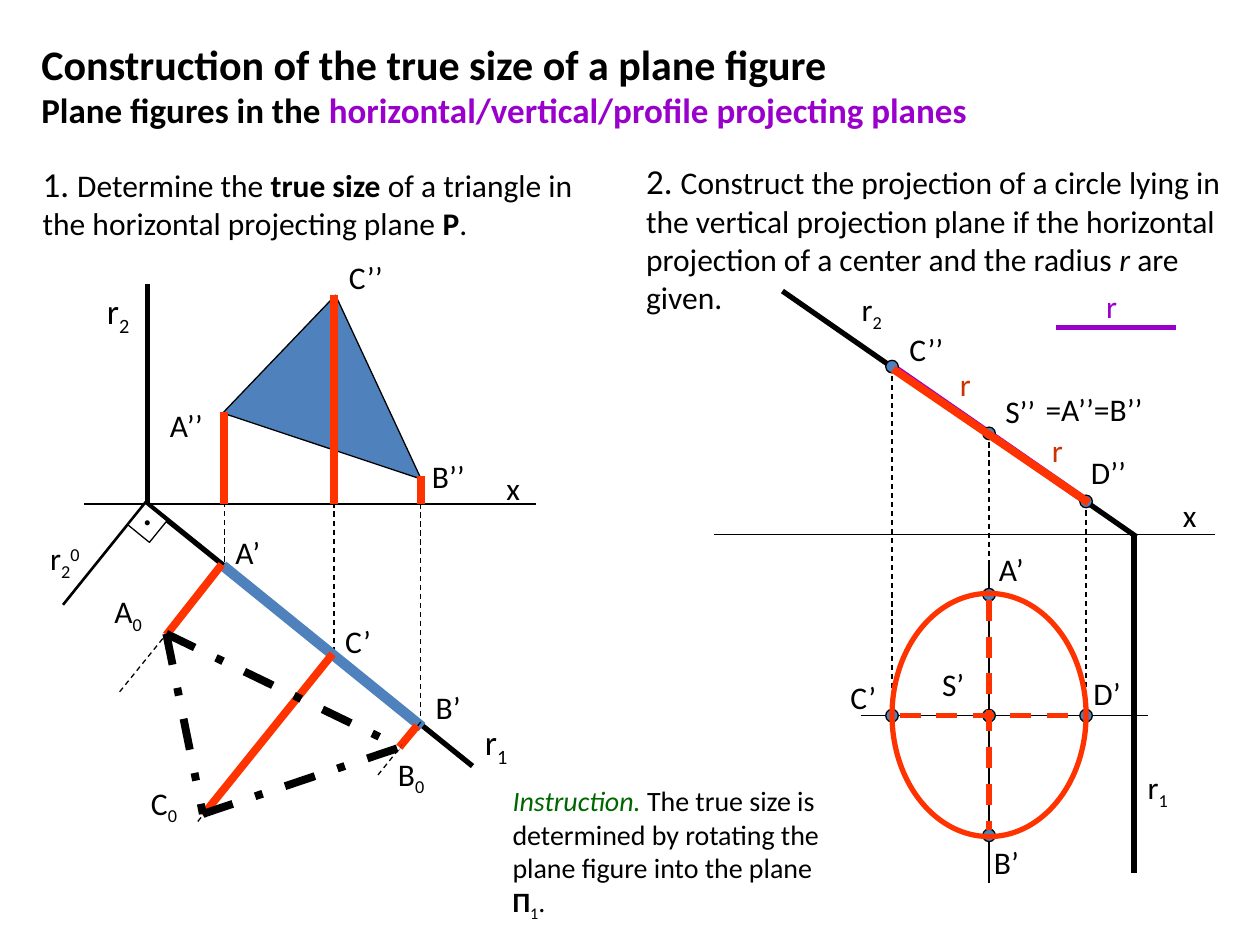
import pptx
import pptx.util
import pptx.dml.color
import pptx.enum.dml
import pptx.enum.shapes
import pptx.enum.text
from lxml import etree

Inches = pptx.util.Inches
Pt = pptx.util.Pt
RGB = pptx.dml.color.RGBColor
MSO = pptx.enum.shapes.MSO_SHAPE
DASH = pptx.enum.dml.MSO_LINE.DASH
DASH_DOT = pptx.enum.dml.MSO_LINE.DASH_DOT
ANCHOR = pptx.enum.text.MSO_ANCHOR

BLACK = RGB(0, 0, 0)
WHITE = RGB(0xFF, 0xFF, 0xFF)
BLUE = RGB(0x4F, 0x81, 0xBD)
RED = RGB(0xFF, 0x33, 0x00)
BRICK = RGB(0xCC, 0x33, 0x00)
PURPLE = RGB(0x99, 0x00, 0xCC)
GREEN = RGB(0x00, 0x66, 0x00)
SUB, SUP = -25, 30


def add_text(s, box, runs, size=18, color=BLACK, anchor=ANCHOR.TOP, wrap=True):
    """Add one paragraph; a run is a string or a (string, format) pair."""
    tf = s.shapes.add_textbox(*map(Inches, box)).text_frame
    tf.word_wrap = wrap
    tf.vertical_anchor = anchor
    p = tf.paragraphs[0]
    for run in [runs] if isinstance(runs, str) else runs:
        text, fmt = (run, {}) if isinstance(run, str) else run
        if text == "\n":
            p.add_line_break()
            continue
        r = p.add_run()
        r.text = text
        r.font.name = "Calibri"
        r.font.size = Pt(fmt.get("size", size))
        r.font.bold = fmt.get("bold", False)
        r.font.italic = fmt.get("italic", False)
        r.font.color.rgb = fmt.get("color", color)
        if "base" in fmt:
            r.font._element.set("baseline", str(fmt["base"] * 1000))


def add_label(s, x, y, text, w=0.57, h=0.4, sub="", sup="", **fmt):
    runs = [text]
    if sub:
        runs.append((sub, {"base": SUB}))
    if sup:
        runs.append((sup, {"base": SUP}))
    add_text(s, (x, y, w, h), runs, **fmt)


def add_line(s, x1, y1, x2, y2, color=BLACK, width=0.75, dash=None):
    c = s.shapes.add_connector(pptx.enum.shapes.MSO_CONNECTOR.STRAIGHT,
                               *map(Inches, (x1, y1, x2, y2)))
    c.line.color.rgb = color
    c.line.width = Pt(width)
    if dash:
        c.line.dash_style = dash
    etree.SubElement(c._element.spPr, pptx.oxml.ns.qn("a:effectLst"))


def add_figure(s, kind, x, y, w, h, fill=BLUE, color=BLACK, width=0.75, rotation=0):
    sp = s.shapes.add_shape(kind, *map(Inches, (x, y, w, h)))
    sp.shadow.inherit = False
    sp.rotation = rotation
    if fill is None:
        sp.fill.background()
    else:
        sp.fill.solid()
        sp.fill.fore_color.rgb = fill
    sp.line.color.rgb = color
    sp.line.width = Pt(width)
    return sp


def add_point(s, x, y):
    add_figure(s, MSO.OVAL, x - 0.05, y - 0.05, 0.1, 0.1)


def add_wording(s):
    bold = {"bold": True}
    add_text(s, (0.23, 0.21, 7.67, 0.92),
             [("Construction of the true size of a plane figure", {"size": 24, **bold}),
              ("\n", {}),
              ("Plane figures in the ", bold),
              ("horizontal/vertical/profile projecting planes", {"color": PURPLE, **bold})],
             size=20, anchor=ANCHOR.MIDDLE)
    add_text(s, (0.24, 1.24, 4.52, 0.74),
             [("1. ", {"size": 20}), "Determine the ", ("true size ", bold),
              "of a triangle in the horizontal projecting plane ", ("P", bold), "."])
    add_text(s, (5.03, 1.22, 4.85, 1.35),
             [("2. ", {"size": 20}),
              "Construct the projection of a circle lying in the vertical projection "
              "plane if the horizontal projection of a center and the radius ",
              ("r ", {"italic": True}), "are given."])
    add_text(s, (3.97, 6.17, 2.67, 1.18),
             [("Instruction. ", {"color": GREEN, "italic": True}),
              "The true size is determined by rotating the plane figure into the plane ",
              ("Π", bold), ("1", {"base": SUB}), "."], size=16)


def add_triangle_task(s):
    # Axis and traces of the plane
    add_line(s, 0.67, 4, 4.25, 4)
    add_line(s, 1.17, 2.25, 1.17, 4, width=3)
    add_line(s, 1.17, 4, 3.75, 6.08, width=3)
    add_label(s, 3.75, 5.67, "r", 0.67, 0.43, sub="1", size=20)
    add_label(s, 0.75, 2.25, "r", 0.67, 0.43, sub="2", size=20)
    add_label(s, 3.92, 3.67, "x", 0.33, 0.37)

    # Vertical projection
    sp = add_figure(s, MSO.ISOSCELES_TRIANGLE, 1.91, 2.4, 1.66, 1.17, rotation=18.4)
    sp.adjustments[0] = 0.334
    for x, y, text in [(1.25, 3.17, "A’’"), (3.33, 3.58, "B’’"), (2.67, 2, "C’’")]:
        add_label(s, x, y, text, 0.58)

    # Projectors down to the horizontal projection
    corners = [(1.78, 3.27, 4.49), (2.65, 2.34, 5.19), (3.34, 3.78, 5.77)]
    for x, top, bottom in corners:
        add_line(s, x, top, x, bottom, dash=DASH)
    add_line(s, 1.77, 4.49, 3.35, 5.77, BLUE, 6)
    for x, y, text in [(1.77, 4.18, "A’"), (2.64, 4.89, "C’"), (3.36, 5.41, "B’")]:
        add_label(s, x, y, text)

    # Rotated trace with its right angle
    add_line(s, 0.5, 4.8, 1.16, 3.98, width=1.5)
    add_label(s, 0.3, 4.23, "r", sub="2", sup="0")
    add_figure(s, MSO.RECTANGLE, 1.06, 4.04, 0.22, 0.22, WHITE, rotation=39.1)
    add_label(s, 1.03, 3.79, ".", 0.3, 0.5, size=24)

    # Perpendiculars, then the heights carried onto them
    for ends in [(0.95, 5.49, 1.76, 4.49), (1.57, 6.52, 2.65, 5.19), (3, 6.15, 3.34, 5.73)]:
        add_line(s, *ends, dash=DASH)
    for x, top, _ in corners:
        add_line(s, x, top, x, 4, RED, 4.5)
    for ends in [(3.31, 5.76, 3.17, 5.93), (1.76, 4.48, 1.32, 5.04), (2.64, 5.19, 1.61, 6.47)]:
        add_line(s, *ends, RED, 4.5)

    # True size of the triangle
    a0, b0, c0 = (1.32, 5.03), (3.18, 5.93), (1.61, 6.46)
    for start, end in [(a0, c0), (a0, b0), (c0, b0)]:
        add_line(s, *start, *end, width=4.5, dash=DASH_DOT)
    for x, y, text in [(0.81, 4.65, "A"), (1.1, 6.17, "C"), (3.06, 5.94, "B")]:
        add_label(s, x, y, text, 0.54, sub="0")


def add_circle_task(s):
    left, mid, right = 7.08, 7.85, 8.62
    top, center, bottom = 4.72, 5.68, 6.63

    # Axis and traces of the plane
    add_line(s, mid, 4.48, mid, 7.01)
    add_line(s, 5.67, 4.24, 9.64, 4.24)
    add_line(s, 6.21, 2.31, 9.02, 4.26, width=3)
    add_line(s, 9, 4.24, 9, 6.93, width=3)
    add_label(s, 6.74, 2.25, "r", 0.45, sub="2")
    add_label(s, 9.29, 3.89, "x", 0.35, 0.37)
    add_label(s, 9.01, 6.05, "r", 0.45, sub="1")

    # Given radius
    add_line(s, 8.38, 2.6, 9.33, 2.6, PURPLE, 3)
    add_label(s, 8.68, 2.23, "r", 0.5, 0.37, color=PURPLE)

    # Projectors, center line and points
    add_line(s, 6.83, center, 9.11, center)
    for x, y in [(left, 2.91), (mid, 3.44), (right, 3.98)]:
        add_line(s, x, y, x, center, dash=DASH)
    add_line(s, left, 2.91, 8.64, 3.99, PURPLE, 4.5)
    for x, y in [(left, 2.91), (mid, 3.44), (right, 3.98), (left, center),
                 (mid, center), (right, center), (mid, top), (mid, bottom)]:
        add_point(s, x, y)
    for x, y, text, w in [(7.12, 2.57, "C’’", 0.57), (7.88, 3.06, "S’’", 0.55),
                          (8.56, 3.55, "D’’", 0.59), (7.83, 4.32, "A’", 0.52),
                          (7.79, 6.64, "B’", 0.49), (6.65, 5.33, "C’", 0.45),
                          (7.38, 5.23, "S’", 0.47), (8.58, 5.3, "D’", 0.47)]:
        add_label(s, x, y, text, w)
    add_label(s, 8.2, 3.05, "=A’’=B’’", 0.97, wrap=False)

    # Projections of the circle
    add_line(s, 7.14, center, 8.57, center, RED, 3, DASH)
    add_line(s, mid, 4.76, mid, 6.59, RED, 3, DASH)
    add_figure(s, MSO.OVAL, left, 4.71, right - left, 1.93, None, RED, 3)
    add_line(s, 7.09, 2.93, 8.64, 3.99, RED, 4.5)
    add_label(s, 7.52, 2.85, "r", 0.43, 0.37, color=BRICK)
    add_label(s, 8.25, 3.37, "r", 0.28, 0.37, color=BRICK, wrap=False)


def main():
    prs = pptx.Presentation()
    prs.slide_width, prs.slide_height = Inches(10), Inches(7.5)
    s = prs.slides.add_slide(prs.slide_layouts[6])
    add_wording(s)
    add_triangle_task(s)
    add_circle_task(s)
    prs.save("out.pptx")


if __name__ == "__main__":
    main()
